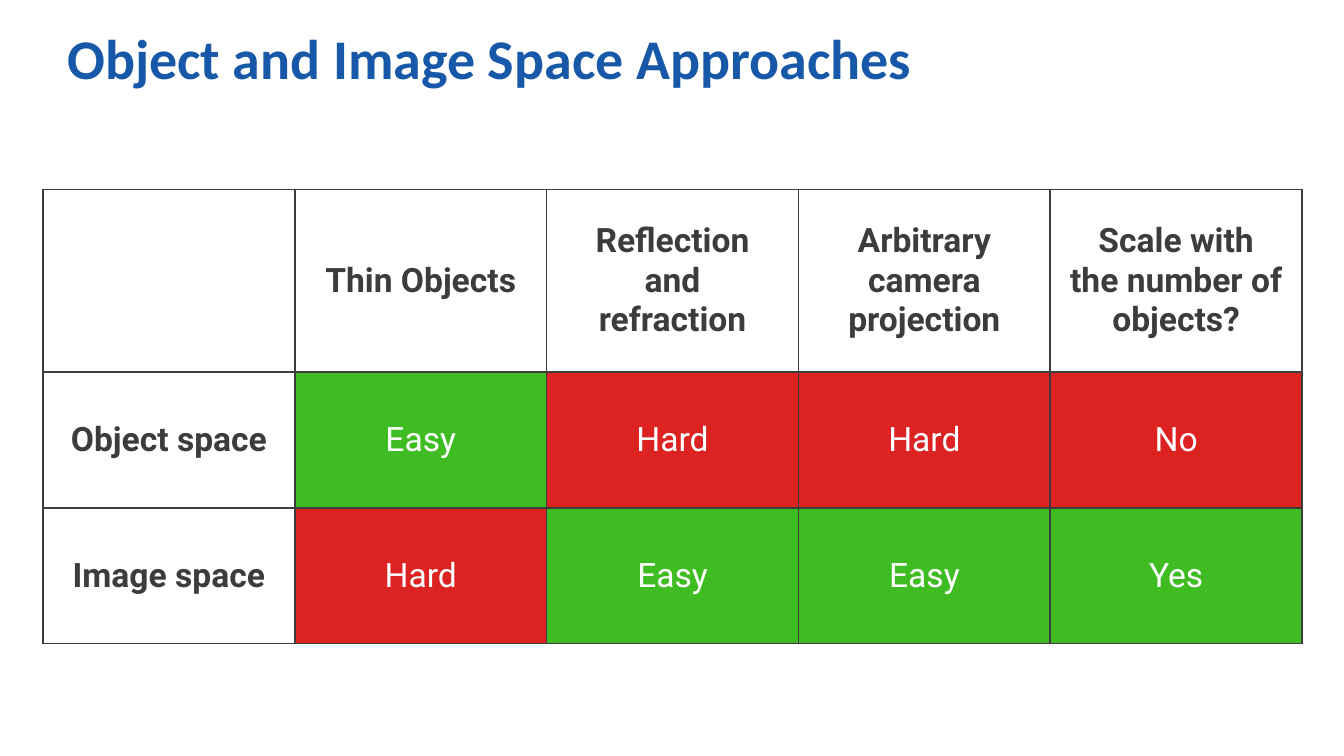
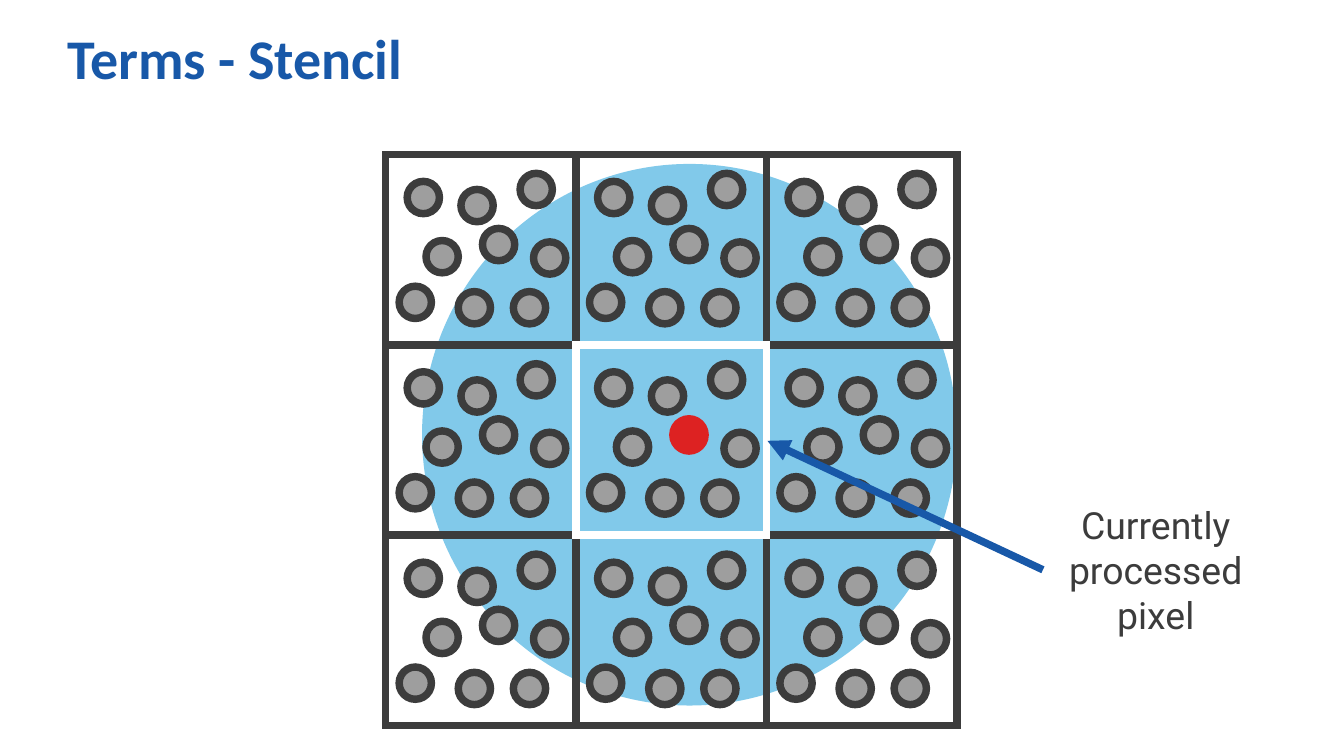
from lxml import etree
from pptx import Presentation
from pptx import util as u
from pptx.dml.color import RGBColor
from pptx.enum import shapes, text
from pptx.oxml import ns

BLUE = RGBColor(0x18, 0x58, 0xA8)
SKY = RGBColor(0x05, 0x95, 0xD6)
DARK = RGBColor(0x3C, 0x3C, 0x3C)
GRAY = RGBColor(0x9E, 0x9E, 0x9E)
GREEN = RGBColor(0x40, 0xBC, 0x23)
RED = RGBColor(0xDD, 0x22, 0x22)
WHITE = RGBColor(0xFF, 0xFF, 0xFF)

ANSWER_FILLS = {"Easy": GREEN, "Yes": GREEN, "Hard": RED, "No": RED}
TITLES = ["Object and Image Space Approaches", "Terms - Stencil"]


def add_span(para, content, font, size, color, bold=False):
    span = para.add_run()
    span.text = content
    span.font.name = font
    span.font.size = u.Pt(size)
    span.font.bold = bold
    span.font.color.rgb = color


def add_figure(page, kind, left, top, width, height, fill=None, line=None):
    figure = page.shapes.add_shape(
        kind, u.Inches(left), u.Inches(top), u.Inches(width), u.Inches(height))
    figure.shadow.inherit = False
    if fill is None:
        figure.fill.background()
    else:
        figure.fill.solid()
        figure.fill.fore_color.rgb = fill
    if line is None:
        figure.line.fill.background()
    else:
        figure.line.color.rgb = line
        figure.line.width = u.Pt(4)
        etree.SubElement(figure.line._get_or_add_ln(), ns.qn("a:miter"), lim="800000")
    return figure


deck = Presentation()
deck.slide_width = u.Inches(10)
deck.slide_height = u.Inches(10) * 9 // 16

pages = []
for heading in TITLES:
    page = deck.slides.add_slide(deck.slide_layouts[5])
    title = page.shapes.title
    title.left, title.top = u.Inches(0.5), u.Inches(0.23)
    title.width, title.height = u.Inches(9), u.Inches(0.94)
    frame = title.text_frame
    frame.margin_left = frame.margin_right = 0
    frame.margin_top = frame.margin_bottom = 0
    frame.vertical_anchor = text.MSO_ANCHOR.TOP
    frame.auto_size = text.MSO_AUTO_SIZE.NONE
    para = frame.paragraphs[0]
    para.alignment = text.PP_ALIGN.LEFT
    para.line_spacing = 0.9
    add_span(para, heading, "Calibri", 30, BLUE, True)
    pages.append(page)
table_page, stencil_page = pages

rows = [
    ["", "Thin Objects", "Reflection\vand\nrefraction",
     "Arbitrary camera\vprojection", "Scale with\vthe number of objects?"],
    ["Object space", "Easy", "Hard", "Hard", "No"],
    ["Image space", "Hard", "Easy", "Easy", "Yes"],
]
row_heights = [1.36, 1.01, 1.01]
table = table_page.shapes.add_table(
    3, 5, u.Inches(0.32), u.Inches(1.41), u.Inches(9.37), u.Inches(3.38)).table
table.first_row = False
table.horz_banding = False
for column in table.columns:
    column.width = u.Inches(9.37 / 5)
for row, height, contents in zip(table.rows, row_heights, rows):
    row.height = u.Inches(height)
    for cell, content in zip(row.cells, contents):
        cell.vertical_anchor = text.MSO_ANCHOR.MIDDLE
        answer_fill = ANSWER_FILLS.get(content)
        if answer_fill is None:
            cell.fill.background()
        else:
            cell.fill.solid()
            cell.fill.fore_color.rgb = answer_fill
        properties = cell._tc.get_or_add_tcPr()
        for index, edge in enumerate(("a:lnL", "a:lnR", "a:lnT", "a:lnB")):
            border = etree.Element(ns.qn(edge), w=str(u.Pt(1)))
            paint = etree.SubElement(border, ns.qn("a:solidFill"))
            etree.SubElement(paint, ns.qn("a:srgbClr"), val=str(DARK))
            properties.insert(index, border)
        for number, block in enumerate(content.split("\n")):
            frame = cell.text_frame
            para = frame.add_paragraph() if number else frame.paragraphs[0]
            para.alignment = text.PP_ALIGN.CENTER
            for position, part in enumerate(block.split("\v")):
                if position:
                    para.add_line_break()
                if part:
                    add_span(para, part, "Roboto", 18,
                             WHITE if answer_fill else DARK, answer_fill is None)

OVAL = shapes.MSO_SHAPE.OVAL
SQUARE = shapes.MSO_SHAPE.RECTANGLE
GRID_LEFT, GRID_TOP, PIXEL, SAMPLE = 2.87, 1.15, 4.25 / 3, 0.24
SAMPLE_OFFSETS = [
    (0.16, 0.2), (0.56, 0.26), (0.3, 0.64), (1, 0.14), (1.1, 0.65),
    (0.72, 0.55), (0.1, 0.98), (0.54, 1.02), (0.95, 1.02),
]
CENTER_SAMPLE = (0.72, 0.55)

disc = add_figure(stencil_page, OVAL, 3.14, 1.22, 3.98, 4.03, SKY)
disc_color = disc.fill._xPr.find(ns.qn("a:solidFill"))[0]
etree.SubElement(disc_color, ns.qn("a:alpha"), val="50000")
stencil_page.shapes.title._element.addprevious(disc._element)

pixels = [(row, column) for row in range(3) for column in range(3)]
pixels.sort(key=lambda pixel: pixel == (1, 1))
for row, column in pixels:
    left, top = GRID_LEFT + column * PIXEL, GRID_TOP + row * PIXEL
    current = (row, column) == (1, 1)
    add_figure(stencil_page, SQUARE, left, top, PIXEL, PIXEL,
               line=WHITE if current else DARK)
    for offset in SAMPLE_OFFSETS:
        marked = current and offset == CENTER_SAMPLE
        add_figure(stencil_page, OVAL, left + offset[0], top + offset[1],
                   SAMPLE, SAMPLE, RED if marked else GRAY, RED if marked else DARK)

arrow = stencil_page.shapes.add_connector(
    shapes.MSO_CONNECTOR.STRAIGHT,
    u.Inches(7.76), u.Inches(4.24), u.Inches(5.71), u.Inches(3.28))
arrow.line.color.rgb = BLUE
arrow.line.width = u.Pt(4)
etree.SubElement(arrow.line._get_or_add_ln(), ns.qn("a:tailEnd"), type="triangle")
etree.SubElement(arrow._element.spPr, ns.qn("a:effectLst"))

box = stencil_page.shapes.add_textbox(
    u.Inches(7.76), u.Inches(3.69), u.Inches(1.68), u.Inches(1.11))
box.text_frame.word_wrap = True
box.text_frame.auto_size = text.MSO_AUTO_SIZE.SHAPE_TO_FIT_TEXT
para = box.text_frame.paragraphs[0]
para.alignment = text.PP_ALIGN.CENTER
add_span(para, "Currently processed pixel", "Roboto", 20, DARK)

deck.save("out.pptx")
